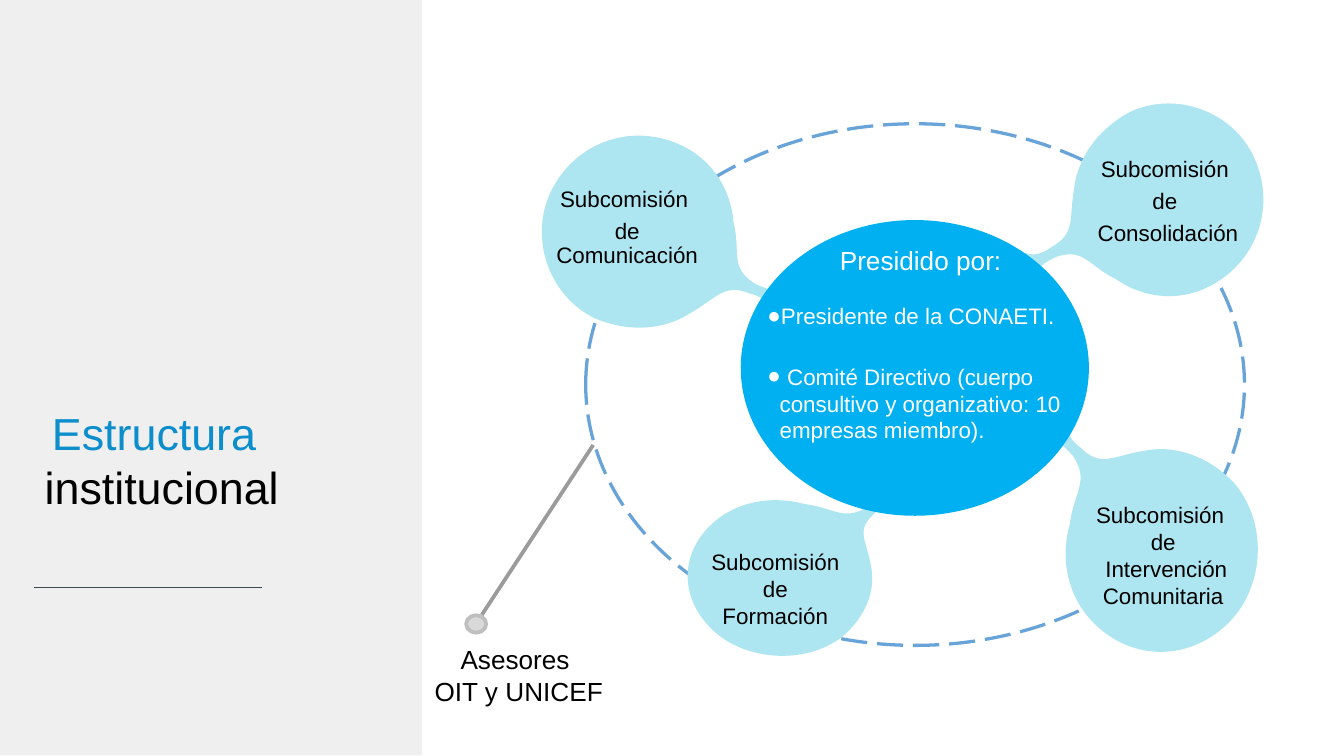
from lxml.etree import SubElement
from pptx import Presentation
from pptx.dml.color import RGBColor
from pptx.enum.dml import MSO_LINE
from pptx.enum.shapes import MSO_CONNECTOR, MSO_SHAPE
from pptx.enum.text import MSO_ANCHOR, MSO_AUTO_SIZE, PP_ALIGN
from pptx.oxml.ns import qn
from pptx.util import Cm, Pt

BLACK = RGBColor(0x00, 0x00, 0x00)
WHITE = RGBColor(0xFF, 0xFF, 0xFF)
PANEL = RGBColor(0xEF, 0xEF, 0xEF)
TITLE = RGBColor(0x0C, 0x8D, 0xCC)
RULE = RGBColor(0x3A, 0x49, 0x50)
RING = RGBColor(0x69, 0xA4, 0xD9)
BUBBLE = RGBColor(0xAD, 0xE6, 0xF1)
CORE = RGBColor(0x00, 0xB0, 0xF0)
LEAD = RGBColor(0x9B, 0x9B, 0x9B)
DOT = RGBColor(0xD9, 0xD9, 0xD9)
EDGE = RGBColor(0xBF, 0xBF, 0xBF)

# Bubble outline in percent of its box: a start, then three points a curve
START = (33, 14)
CURVES = [
    (47, 0), (71, 0), (85, 14),
    (100, 29), (100, 52), (85, 67),
    (76, 76), (63, 79), (51, 76),
    (39, 75), (35, 69), (26, 76),
    (21, 81), (20, 84), (20, 88),
    (20, 91), (20, 94), (18, 96),
    (14, 100), (8, 100), (4, 96),
    (0, 92), (0, 86), (4, 82),
    (6, 80), (8, 79), (11, 79),
    (16, 79), (19, 79), (23, 73),
    (30, 65), (25, 60), (23, 49),
    (20, 37), (24, 24), START,
]


class Board:
    font = "Arial"

    def __init__(self, deck):
        self.slide = deck.slides.add_slide(deck.slide_layouts[1])
        self.shapes = self.slide.shapes

    def paint(self, shape, fill=None, line=None, width=1, dash=None):
        shape.shadow.inherit = False
        if fill is None:
            shape.fill.background()
        else:
            shape.fill.solid()
            shape.fill.fore_color.rgb = fill
        if line is None:
            shape.line.fill.background()
        else:
            shape.line.color.rgb = line
            shape.line.width = Pt(width)
            if dash:
                shape.line.dash_style = dash
        return shape

    def shape(self, kind, box, **look):
        return self.paint(self.shapes.add_shape(kind, *map(Cm, box)), **look)

    def rule(self, start, end, color, width):
        line = self.shapes.add_connector(
            MSO_CONNECTOR.STRAIGHT, *map(Cm, start + end))
        line.line.color.rgb = color
        line.line.width = Pt(width)
        SubElement(line._element.spPr, qn("a:effectLst"))

    def bubble(self, box, turn):
        left, top, wide, high = box
        dots = [(Cm(left + wide * x / 100), Cm(top + high * y / 100))
                for x, y in [START] + CURVES]
        form = self.shapes.build_freeform(*dots[0])
        form.add_line_segments(dots[1:], close=False)
        shape = self.paint(form.convert_to_shape(), fill=BUBBLE)
        shape.rotation = turn
        # Join each three segments into one curve
        track = next(shape._element.iter(qn("a:path")))
        lines = track.findall(qn("a:lnTo"))
        for i in range(0, len(lines), 3):
            curve = SubElement(track, qn("a:cubicBezTo"))
            for line in lines[i:i + 3]:
                curve.append(line[0])
                track.remove(line)
        SubElement(track, qn("a:close"))

    def style(self, run, size, color):
        run.font.name = self.font
        run.font.size = Pt(size)
        run.font.color.rgb = color

    def label(self, box, text, size=12, lead=None, after=None):
        frame = self.shapes.add_textbox(*map(Cm, box)).text_frame
        frame.word_wrap = True
        frame.text = text
        for par in frame.paragraphs:
            par.alignment = PP_ALIGN.CENTER
            if lead:
                par.line_spacing = lead
                par.space_after = Pt(after)
            for run in par.runs:
                self.style(run, size, BLACK)

    def place(self, holder, box):
        """Move a placeholder to its box and to the front."""
        holder.left, holder.top, holder.width, holder.height = map(Cm, box)
        self.shapes._spTree.append(holder._element)
        frame = holder.text_frame
        frame.word_wrap = True
        frame.auto_size = MSO_AUTO_SIZE.NONE
        return frame

    def indent(self, par, size):
        props = par._p.get_or_add_pPr()
        props.set("marL", str(Cm(size)))
        props.set("indent", str(-Cm(size)))
        return props

    def title(self, box, parts, size):
        frame = self.place(self.shapes.title, box)
        frame.vertical_anchor = MSO_ANCHOR.MIDDLE
        frame.margin_left = frame.margin_right = frame.margin_bottom = Cm(0.1)
        frame.margin_top = Cm(0.39)
        par = frame.paragraphs[0]
        par.alignment = PP_ALIGN.CENTER
        self.indent(par, 0.76)
        for text, color in parts:
            run = par.add_run()
            run.text = text
            self.style(run, size, color)

    def list(self, box, head, items):
        frame = self.place(self.slide.placeholders[1], box)
        frame.text = "\n".join([head] + [text for text, gap in items])
        first, *rest = frame.paragraphs
        first.alignment = PP_ALIGN.CENTER
        first.space_before = Pt(0)
        SubElement(self.indent(first, 0), qn("a:buNone"))
        self.style(first.runs[0], 14, WHITE)
        for par, (text, gap) in zip(rest, items):
            par.space_before = Pt(gap)
            props = self.indent(par, 0.23)
            tint = SubElement(props, qn("a:buClr"))
            SubElement(tint, qn("a:srgbClr")).set("val", str(WHITE))
            SubElement(props, qn("a:buChar")).set("char", "●")
            self.style(par.runs[0], 12, WHITE)


def main():
    deck = Presentation()
    deck.slide_width, deck.slide_height = Cm(25.4), Cm(14.29)
    board = Board(deck)

    # Side panel with title
    board.shape(MSO_SHAPE.RECTANGLE, (-0.02, 0, 8, 14.28), fill=PANEL)
    board.title((-0.43, 6.73, 6.45, 3.63),
                [(" Estructura ", TITLE), ("institucional ", BLACK)], 24)
    board.rule((4.95, 11.1), (0.64, 11.1), RULE, 0.75)

    # Dashed ring and bubbles
    board.shape(MSO_SHAPE.OVAL, (11.07, 2.34, 12.45, 9.86),
                line=RING, width=1.75, dash=MSO_LINE.LONG_DASH)
    for box, turn in [
        ((19.09, 1.6, 4.83, 4.93), 20.7),
        ((18.92, 7.45, 5.16, 4.93), 92.6),
        ((10.21, 2.18, 4.9, 4.95), 251.3),
        ((12.84, 8.57, 4.7, 3.99), 183.3),
    ]:
        board.bubble(box, turn)

    # Core with the chairing bodies
    board.shape(MSO_SHAPE.OVAL, (14, 4.16, 6.58, 5.59), fill=CORE)
    board.list((14.25, 4.5, 6.3, 4.06), "Presidido por:", [
        ("Presidente de la CONAETI.", 14),
        (" Comité Directivo (cuerpo consultivo y organizativo: "
         "10 empresas miembro).", 18),
    ])

    # Bubble labels
    tight = {"lead": 0.9, "after": 4.2}
    board.label((10, 3.43, 3.71, 1.83),
                "Subcomisión \nde Comunicación", **tight)
    board.label((19.65, 9.35, 4.67, 2.31),
                "Subcomisión \nde\n Intervención Comunitaria")
    board.label((12.6, 10.24, 4.11, 1.8), "Subcomisión\n de \nFormación")
    board.label((19.84, 2.87, 4.47, 2.01),
                "Subcomisión \nde \nConsolidación", **tight)

    # Advisers
    lead = board.shape(MSO_SHAPE.LINE_CALLOUT_1_NO_BORDER,
                       (11.73, 9.98, 3.05, 2.49), line=LEAD, width=2)
    for i, value in enumerate((-0.63, -0.17, 0.66, -0.86)):
        lead.adjustments[i] = value
    board.label((7.75, 12.04, 4.11, 1.45), "Asesores \nOIT y UNICEF", 14)
    board.shape(MSO_SHAPE.OVAL, (8.81, 11.63, 0.38, 0.33),
                fill=DOT, line=EDGE, width=2)

    deck.save("out.pptx")


if __name__ == "__main__":
    main()
